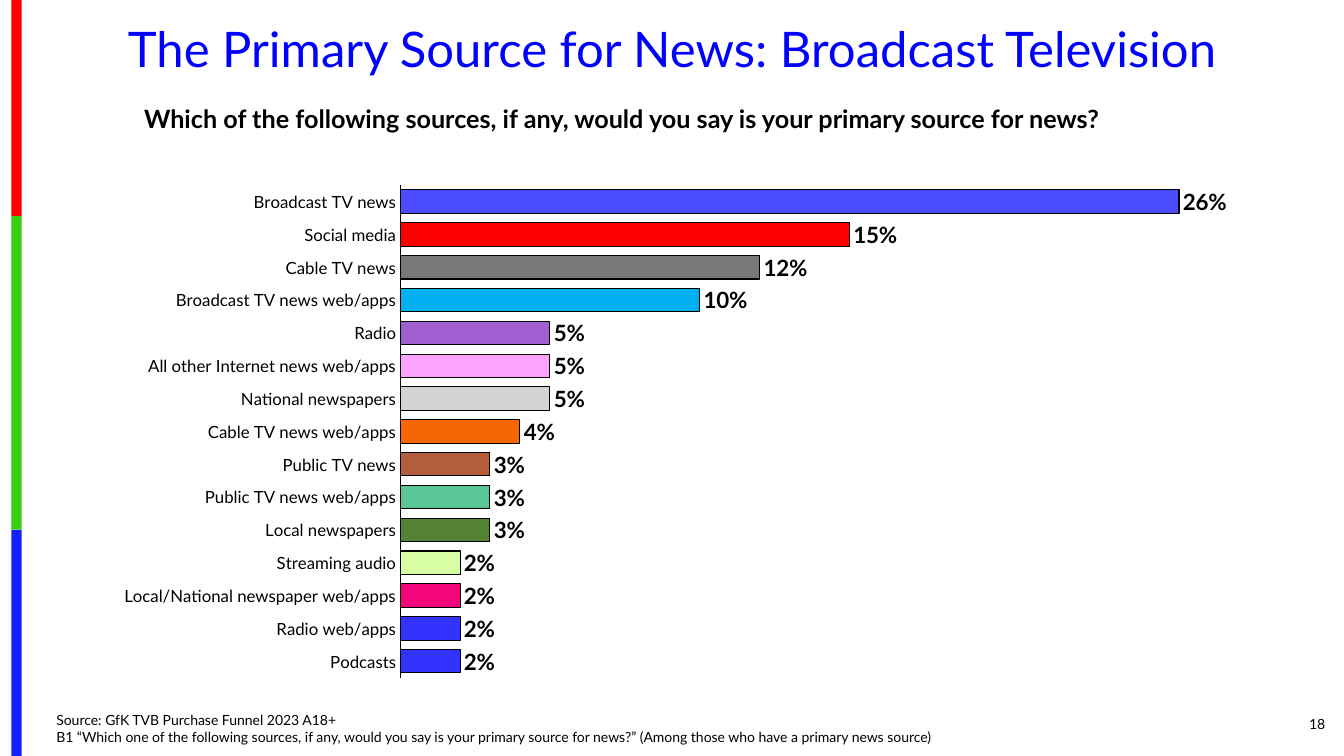
import pptx
import pptx.chart.data
import pptx.dml.color
import pptx.enum.chart
import pptx.enum.shapes
import pptx.enum.text
import pptx.oxml
import pptx.oxml.ns
import pptx.util

Cm, Pt = pptx.util.Cm, pptx.util.Pt
RGBColor = pptx.dml.color.RGBColor
ALIGN, ANCHOR = pptx.enum.text.PP_ALIGN, pptx.enum.text.MSO_ANCHOR

# Content
FONT = "Lato"
BLACK = RGBColor(0x00, 0x00, 0x00)
TITLE_BLUE = RGBColor(0x00, 0x00, 0xFF)
BAR_BLUE = RGBColor(0x33, 0x33, 0xFF)

TITLE = "The Primary Source for News: Broadcast Television"
QUESTION = ("Which of the following sources, if any, would you say is "
            "your primary source for news?")
SOURCE = ("Source: GfK TVB Purchase Funnel 2023 A18+\n"
          "B1 “Which one of the following sources, if any, would you say is your "
          "primary source for news?” (Among those who have a primary news source)")
PAGE = "18"

NEWS_SOURCES = [
    ("Broadcast TV news", 0.26, RGBColor(0x4C, 0x4C, 0xFF)),
    ("Social media", 0.15, RGBColor(0xFF, 0x00, 0x00)),
    ("Cable TV news", 0.12, RGBColor(0x78, 0x78, 0x78)),
    ("Broadcast TV news web/apps", 0.10, RGBColor(0x00, 0xB0, 0xF0)),
    ("Radio", 0.05, RGBColor(0x9F, 0x5F, 0xD0)),
    ("All other Internet news web/apps", 0.05, RGBColor(0xFB, 0xA4, 0xFF)),
    ("National newspapers", 0.05, RGBColor(0xD3, 0xD3, 0xD3)),
    ("Cable TV news web/apps", 0.04, RGBColor(0xF6, 0x66, 0x04)),
    ("Public TV news", 0.03, RGBColor(0xB2, 0x5E, 0x3C)),
    ("Public TV news web/apps", 0.03, RGBColor(0x5A, 0xC6, 0x95)),
    ("Local newspapers", 0.03, RGBColor(0x54, 0x82, 0x34)),
    ("Streaming audio", 0.02, RGBColor(0xD7, 0xFF, 0xA1)),
    ("Local/National newspaper web/apps", 0.02, RGBColor(0xF3, 0x05, 0x7C)),
    ("Radio web/apps", 0.02, BAR_BLUE),
    ("Podcasts", 0.02, BAR_BLUE),
]
# Height in cm and colour, from the top down
STRIPES = [
    (5.45, RGBColor(0xFE, 0x00, 0x00)),
    (7.9, RGBColor(0x36, 0xCF, 0x12)),
    (5.7, RGBColor(0x13, 0x22, 0xFE)),
]
# Text, box in cm, size, colour, bold, alignment, anchor, wrap, line spacing
TEXTS = [
    (TITLE, (1.17, 0.51, 31.55, 1.6), 35, TITLE_BLUE, False,
     ALIGN.CENTER, ANCHOR.MIDDLE, True, 0.9),
    (QUESTION, (3.38, 2.49, 28.3, 1.02), 18, BLACK, True,
     ALIGN.LEFT, ANCHOR.TOP, False, 1.0),
    (SOURCE, (1.17, 17.78, 24, 1.12), 10, BLACK, False,
     ALIGN.LEFT, ANCHOR.BOTTOM, True, 1.0),
    (PAGE, (30.91, 17.73, 2.74, 1.02), 10, BLACK, False,
     ALIGN.RIGHT, ANCHOR.MIDDLE, True, 1.0),
]
PLOT = {"x": 0.286, "y": 0.087, "w": 0.686, "h": 0.91}


def set_font(font, size, color=BLACK, bold=False):
    font.name, font.size, font.bold = FONT, Pt(size), bold
    font.color.rgb = color


prs = pptx.Presentation()
prs.slide_width, prs.slide_height = Cm(33.87), Cm(19.05)
s = prs.slides.add_slide(prs.slide_layouts[6])

# Side stripes, stacked
top = 0
for height, color in STRIPES:
    sp = s.shapes.add_shape(pptx.enum.shapes.MSO_SHAPE.RECTANGLE,
                            Cm(0.29), Cm(top), Cm(0.26), Cm(height))
    sp.shadow.inherit = False
    sp.fill.solid()
    sp.fill.fore_color.rgb = color
    sp.line.fill.background()
    top += height

# Bar chart
data = pptx.chart.data.CategoryChartData(number_format="0%")
data.categories = [name for name, _, _ in NEWS_SOURCES]
data.add_series("Series 1", [share for _, share, _ in NEWS_SOURCES])
chart = s.shapes.add_chart(pptx.enum.chart.XL_CHART_TYPE.BAR_CLUSTERED,
                           Cm(0.64), Cm(3.48), Cm(33.02), Cm(13.64), data).chart
chart.has_title = chart.has_legend = False
set_font(chart.font, 10)

sources = chart.category_axis
sources.reverse_order = True
sources.major_tick_mark = pptx.enum.chart.XL_TICK_MARK.NONE
sources.format.line.color.rgb = BLACK
sources.format.line.width = Pt(0.75)
set_font(sources.tick_labels.font, 12)

shares = chart.value_axis
shares.minimum_scale, shares.maximum_scale = 0, 0.3
shares.has_major_gridlines = False
shares.visible = False

plot = chart.plots[0]
plot.gap_width = 40
plot.vary_by_categories = False
plot.has_data_labels = True
labels = plot.data_labels
labels.show_value = True
labels.number_format, labels.number_format_is_linked = "0%", False
labels.position = pptx.enum.chart.XL_LABEL_POSITION.OUTSIDE_END
set_font(labels.font, 16, bold=True)

for i, (_, _, color) in enumerate(NEWS_SOURCES):
    bar = plot.series[0].points[i].format
    bar.fill.solid()
    bar.fill.fore_color.rgb = color
    bar.line.color.rgb = BLACK
    bar.line.width = Pt(0.75)

# Fixed inner plot area
area = chart._chartSpace.chart.plotArea
for old in area.findall(pptx.oxml.ns.qn("c:layout")):
    area.remove(old)
places = "".join(f'<c:{k} val="{v}"/>' for k, v in PLOT.items())
area.insert(0, pptx.oxml.parse_xml(
    f'<c:layout {pptx.oxml.ns.nsdecls("c")}><c:manualLayout>'
    '<c:layoutTarget val="inner"/><c:xMode val="edge"/><c:yMode val="edge"/>'
    f'{places}</c:manualLayout></c:layout>'))

# Title, question, source note and page number
for text, box, size, color, bold, align, anchor, wrap, spacing in TEXTS:
    tf = s.shapes.add_textbox(*map(Cm, box)).text_frame
    tf.word_wrap = wrap
    tf.vertical_anchor = anchor
    tf.text = text
    for p in tf.paragraphs:
        p.alignment, p.line_spacing = align, spacing
        for r in p.runs:
            set_font(r.font, size, color, bold)

prs.save("out.pptx")
